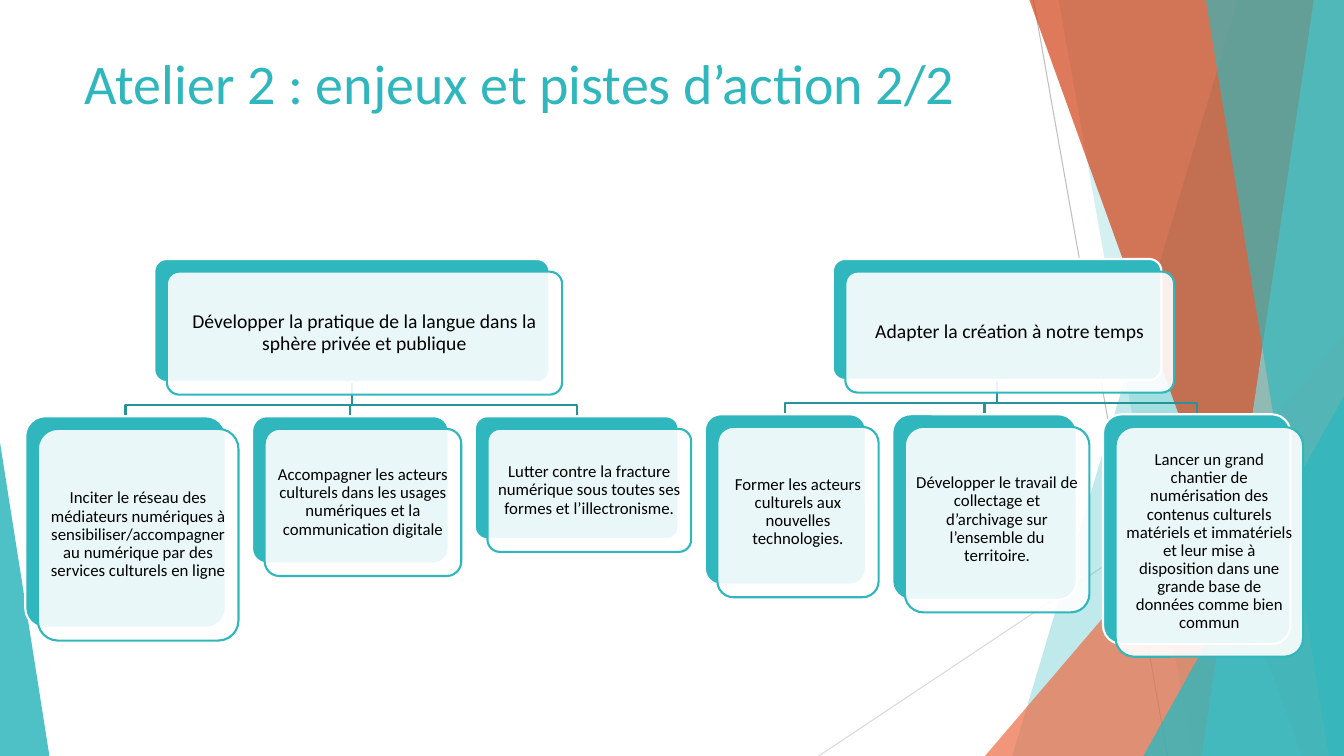
from lxml import etree
from pptx import Presentation
from pptx import util as u
from pptx.dml.color import RGBColor
from pptx.enum import shapes, text
from pptx.oxml import ns

TEAL = RGBColor(0x30, 0xB7, 0xBD)
DARK_TEAL = RGBColor(0x26, 0x93, 0x97)
PALE_TEAL = RGBColor(0x7C, 0xDA, 0xDE)
CORAL = RGBColor(0xEC, 0x6E, 0x47)
RUST = RGBColor(0xD1, 0x42, 0x16)
GREY = RGBColor(0xBF, 0xBF, 0xBF)
LIGHT_GREY = RGBColor(0xD9, 0xD9, 0xD9)
WHITE = RGBColor(0xFF, 0xFF, 0xFF)
BLACK = RGBColor(0, 0, 0)

WIDTH, HEIGHT = 13.33, 7.5
OFFSET = 0.125    # shift of a card's front panel from its back panel
BUS_DROP = 0.23   # from the parent's back panel down to the crossbar
CHILD_DROP = 0.34  # from the parent's back panel down to the children


class Deck:
    font = "Calibri"
    outline = u.Pt(1.5)

    def __init__(self):
        self.presentation = Presentation()
        self.presentation.slide_width = u.Inches(WIDTH)
        self.presentation.slide_height = u.Inches(HEIGHT)
        layout = self.presentation.slide_layouts.get_by_name("Title Only")
        self.slide = self.presentation.slides.add_slide(layout)
        self.shapes = self.slide.shapes

    def paint(self, shape, color, opacity=100, line=None):
        shape.shadow.inherit = False
        shape.fill.solid()
        shape.fill.fore_color.rgb = color
        if opacity < 100:
            tint = shape.fill._xPr.find(".//" + ns.qn("a:srgbClr"))
            etree.SubElement(tint, ns.qn("a:alpha"), val=str(opacity * 1000))
        if line is None:
            shape.line.fill.background()
        else:
            shape.line.color.rgb = line
            shape.line.width = self.outline

    def outline_path(self, points, close):
        corners = [(u.Inches(x), u.Inches(y)) for x, y in points]
        builder = self.shapes.build_freeform(*corners[0])
        builder.add_line_segments(corners[1:], close=close)
        return builder.convert_to_shape()

    def facet(self, points, color, opacity):
        self.paint(self.outline_path(points, True), color, opacity)

    def triangle(self, left, top, width, apex, color, opacity):
        corner = self.shapes.add_shape(
            shapes.MSO_SHAPE.ISOSCELES_TRIANGLE, u.Inches(left), u.Inches(top),
            u.Inches(width), u.Inches(HEIGHT - top))
        corner.adjustments[0] = apex
        self.paint(corner, color, opacity)

    def ray(self, start, end, color):
        ray = self.shapes.add_connector(
            shapes.MSO_CONNECTOR.STRAIGHT, *map(u.Inches, start + end))
        ray.line.color.rgb = color
        ray.line.width = u.Pt(0.75)
        etree.SubElement(ray._element.spPr, ns.qn("a:effectLst"))

    def branch(self, start_x, start_y, end_x):
        bus_y = start_y + BUS_DROP
        link = self.outline_path(
            [(start_x, start_y), (start_x, bus_y), (end_x, bus_y),
             (end_x, start_y + CHILD_DROP)], False)
        link.shadow.inherit = False
        link.fill.background()
        link.line.color.rgb = DARK_TEAL
        link.line.width = self.outline

    def panel(self, left, top, width, height):
        panel = self.shapes.add_shape(
            shapes.MSO_SHAPE.ROUNDED_RECTANGLE,
            *map(u.Inches, (left, top, width, height)))
        panel.adjustments[0] = 0.1
        return panel

    def card(self, left, top, width, height, wording, size):
        self.paint(self.panel(left, top, width, height), TEAL, line=WHITE)
        front = self.panel(left + OFFSET, top + OFFSET, width, height)
        self.paint(front, WHITE, 90, TEAL)
        frame = front.text_frame
        frame.text = wording
        frame.word_wrap = True
        frame.vertical_anchor = text.MSO_ANCHOR.MIDDLE
        frame.margin_left = frame.margin_right = u.Inches(0.05)
        frame.margin_top = frame.margin_bottom = u.Inches(0.05)
        paragraph = frame.paragraphs[0]
        paragraph.alignment = text.PP_ALIGN.CENTER
        paragraph.line_spacing = 0.9
        self.format_runs(paragraph, size, BLACK)

    def format_runs(self, paragraph, size, color):
        for run in paragraph.runs:
            run.font.name = self.font
            run.font.size = u.Pt(size)
            run.font.color.rgb = color

    def title(self, wording):
        heading = self.shapes.title
        heading.left, heading.top = u.Inches(0.74), u.Inches(0)
        heading.width, heading.height = u.Inches(9.4), u.Inches(1.2)
        frame = heading.text_frame
        frame.text = wording
        frame.word_wrap = True
        frame.auto_size = text.MSO_AUTO_SIZE.NONE
        frame.vertical_anchor = text.MSO_ANCHOR.BOTTOM
        frame.paragraphs[0].alignment = text.PP_ALIGN.LEFT
        self.format_runs(frame.paragraphs[0], 40, TEAL)

    def tree(self, left, top, width, height, goal, actions):
        bottom = top + height
        for x, w, _, _ in actions:
            self.branch(left + width / 2, bottom, x + w / 2)
        self.card(left, top, width, height, goal, 14)
        for x, w, h, action in actions:
            self.card(x, bottom + CHILD_DROP, w, h, action, 12)


def right_facet(top_x, bottom_x):
    """Area between a slanted edge and the right side of the slide."""
    return [(top_x, 0), (WIDTH, 0), (WIDTH, HEIGHT), (bottom_x, HEIGHT)]


# Goals: left, top, width, height, wording, then actions (left, width, height, wording)
GOALS = [
    (1.53, 2.57, 3.92, 1.22,
     "Développer la pratique de la langue dans la sphère privée et publique", [
         (0.25, 1.99, 2.1, "Inciter le réseau des médiateurs numériques à "
          "sensibiliser/accompagner au numérique par des services culturels en ligne"),
         (2.5, 1.95, 1.46, "Accompagner les acteurs culturels dans les usages "
          "numériques et la communication digitale"),
         (4.71, 2.02, 1.22, "Lutter contre la fracture numérique sous toutes ses "
          "formes et l’illectronisme."),
     ]),
    (8.26, 2.57, 3.26, 1.2, "Adapter la création à notre temps", [
        (6.99, 1.6, 1.69, "Former les acteurs culturels aux nouvelles technologies."),
        (8.85, 1.83, 1.84, "Développer le travail de collectage et d’archivage sur "
         "l’ensemble du territoire."),
        (10.94, 1.86, 2.28, "Lancer un grand chantier de numérisation des contenus "
         "culturels matériels et immatériels et leur mise à disposition dans une "
         "grande base de données comme bien commun"),
    ]),
]


def main():
    deck = Deck()

    # Background facets
    deck.ray((10.25, 0), (11.58, HEIGHT), GREY)
    deck.ray((WIDTH, 4.03), (8.12, HEIGHT), LIGHT_GREY)
    deck.facet(right_facet(12.28, 10.04), TEAL, 30)
    deck.facet(right_facet(10.5, 11.83), TEAL, 20)
    deck.triangle(9.77, 3.33, 3.56, 1, CORAL, 72)
    deck.facet(right_facet(10.21, 12.91), RUST, 70)
    deck.facet(right_facet(13.03, 11.92), PALE_TEAL, 70)
    deck.facet(right_facet(11.96, 13.18), TEAL, 65)
    deck.triangle(11.34, 3.93, 1.99, 1, TEAL, 80)
    deck.triangle(0, 4.39, 0.49, 0, TEAL, 85)

    # Title
    deck.title("Atelier 2 : enjeux et pistes d’action 2/2")

    # Goal trees
    for goal in GOALS:
        deck.tree(*goal)

    deck.presentation.save("out.pptx")


if __name__ == "__main__":
    main()
